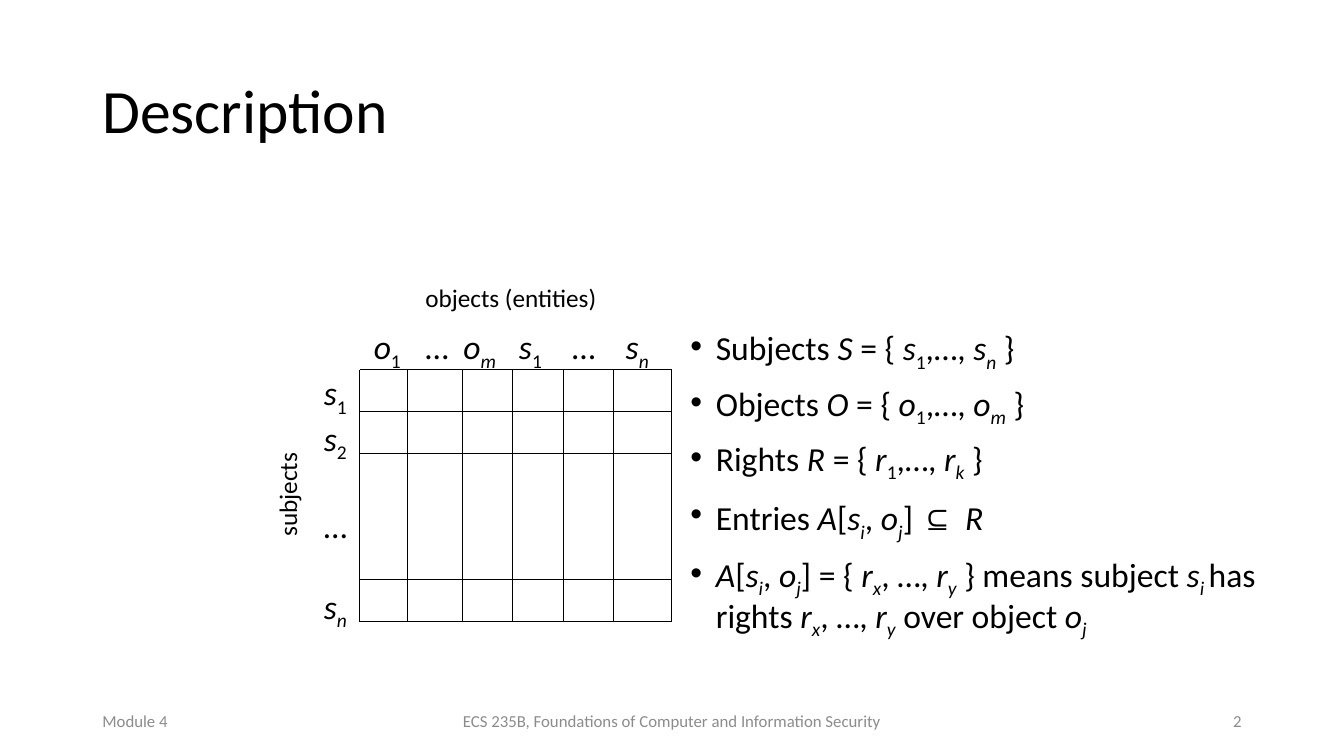
from lxml.etree import SubElement
from pptx import Presentation
from pptx.dml.color import RGBColor
from pptx.enum.shapes import MSO_CONNECTOR
from pptx.enum.text import MSO_ANCHOR, PP_ALIGN
from pptx.oxml.ns import qn
from pptx.util import Cm, Pt

COLORS = {"text": "000000", "footer": "8C8C8C", "background": "FFFFFF"}
TOGGLES = {"~": "italic", "^": "subscript", "`": "symbol", "%": "large"}

COLUMN_EDGES = [0, 1.19, 2.59, 3.85, 5.12, 6.39, 7.86]
ROW_EDGES = [0, 1.05, 2.1, 5.29, 6.35]
COLUMN_LABELS = ["~o~^1^", "…", "~o^m^~", "~s~^1^", "…", "~s^n^~"]
COLUMN_TABS = [1.3, 2.26, 3.66, 5, 6.35]
ROW_LABELS = ["~s~^1^", "~s~^2^", "…", "~s^n^~"]
DEFINITIONS = [
    "Subjects ~S~ = { ~s~^1^,…, ~s^n^~ }",
    "Objects ~O~ = { ~o~^1^,…, ~o^m^~ }",
    "Rights ~R~ = { ~r~^1^,…, ~r^k^~ }",
    "Entries ~A~[~s^i^~, ~o^j^~] `⊆% %`~R~",
    "~A~[~s^i^~, ~o^j^~] = { ~r^x^~, …, ~r^y^~ } means subject ~s^i ^~has rights "
    "~r^x^~, …, ~r^y^~ over object ~o^j^~",
]


def split_markup(text):
    styles, piece = set(), ""
    for character in text:
        if character in TOGGLES:
            if piece:
                yield piece, set(styles)
            styles ^= {TOGGLES[character]}
            piece = ""
        else:
            piece += character
    if piece:
        yield piece, styles


def add_runs(paragraph, text, size, color):
    for piece, styles in split_markup(text):
        run = paragraph.add_run()
        run.text = piece
        run.font.name = "Arial" if "symbol" in styles else "Calibri"
        run.font.size = Pt(28 if "large" in styles else size)
        run.font.italic = "italic" in styles
        run.font.color.rgb = RGBColor.from_string(COLORS[color])
        if "subscript" in styles:
            run.font._element.set("baseline", "-25000")


def add_text(slide, box, lines, size=24, color="text", align=PP_ALIGN.LEFT,
             anchor=MSO_ANCHOR.TOP, wrap=True, rotation=0, line_spacing=None,
             space_before=(), bullet=False, tabs=()):
    shape = slide.shapes.add_textbox(*map(Cm, box))
    shape.rotation = rotation
    frame = shape.text_frame
    frame.word_wrap = wrap
    frame.vertical_anchor = anchor
    for index, line in enumerate(lines):
        paragraph = frame.paragraphs[0] if index == 0 else frame.add_paragraph()
        paragraph.alignment = align
        if line_spacing:
            paragraph.line_spacing = line_spacing
        if space_before:
            paragraph.space_before = Pt(space_before[index])
        properties = paragraph._p.get_or_add_pPr()
        if bullet:
            properties.set("marL", str(Cm(0.64)))
            properties.set("indent", str(-Cm(0.64)))
            SubElement(properties, qn("a:buFont"), typeface="Arial")
            SubElement(properties, qn("a:buChar"), char="•")
        if tabs:
            tab_list = SubElement(properties, qn("a:tabLst"))
            for position in tabs:
                SubElement(tab_list, qn("a:tab"), pos=str(Cm(position)), algn="l")
        add_runs(paragraph, line, size, color)
    return shape


def add_line(slide, *ends):
    line = slide.shapes.add_connector(MSO_CONNECTOR.STRAIGHT, *map(Cm, ends))
    line.line.color.rgb = RGBColor.from_string(COLORS["text"])
    line.line.width = Pt(0.75)
    SubElement(line._element.spPr, qn("a:effectLst"))


def add_title(slide, box):
    add_text(slide, box, ["Description"], size=44, anchor=MSO_ANCHOR.MIDDLE,
             line_spacing=0.9)


def add_definitions(slide, box):
    add_text(slide, box, DEFINITIONS, line_spacing=0.9, bullet=True,
             space_before=[10] * len(DEFINITIONS))


def add_access_matrix(slide, box):
    left, top, width, height = box
    add_text(slide, (left + 1.4, top - 2.33, 4.88, 1.02), ["objects (entities)"],
             size=18, wrap=False)
    add_text(slide, (left - 3.15, top + 2.62, 2.64, 1.02), ["subjects"],
             size=18, wrap=False, rotation=270)
    add_text(slide, (left - 1.16, top - 0.07, 1.14, 6.4), ROW_LABELS,
             wrap=False, space_before=[0, 0, 29.3, 29])
    add_text(slide, (left + 0.1, top - 1.22, 7.7, 1.3), ["\t".join(COLUMN_LABELS)],
             tabs=COLUMN_TABS)
    for edge in COLUMN_EDGES:
        add_line(slide, left + edge, top, left + edge, top + height)
    for edge in ROW_EDGES:
        add_line(slide, left, top + edge, left + width, top + edge)


def add_footer(slide, box):
    left, top, width, height = box
    parts = [
        (0, 7.62, "Module 4", PP_ALIGN.LEFT),
        (8.89, 11.43, "ECS 235B, Foundations of Computer and Information Security",
         PP_ALIGN.CENTER),
        (width - 7.62, 7.62, "2", PP_ALIGN.RIGHT),
    ]
    for offset, part_width, text, align in parts:
        add_text(slide, (left + offset, top, part_width, height), [text], size=12,
                 color="footer", align=align, anchor=MSO_ANCHOR.MIDDLE)


def main():
    presentation = Presentation()
    presentation.slide_width = Cm(33.87)
    presentation.slide_height = Cm(19.05)
    slide = presentation.slides.add_slide(presentation.slide_layouts[6])
    slide.background.fill.solid()
    slide.background.fill.fore_color.rgb = RGBColor.from_string(COLORS["background"])
    add_title(slide, (2.33, 1.01, 29.21, 3.68))
    add_definitions(slide, (17.15, 8.14, 14.96, 9.01))
    add_access_matrix(slide, (9.07, 9.32, COLUMN_EDGES[-1], ROW_EDGES[-1]))
    add_footer(slide, (2.33, 17.65, 29.21, 1.02))
    presentation.save("out.pptx")


if __name__ == "__main__":
    main()
